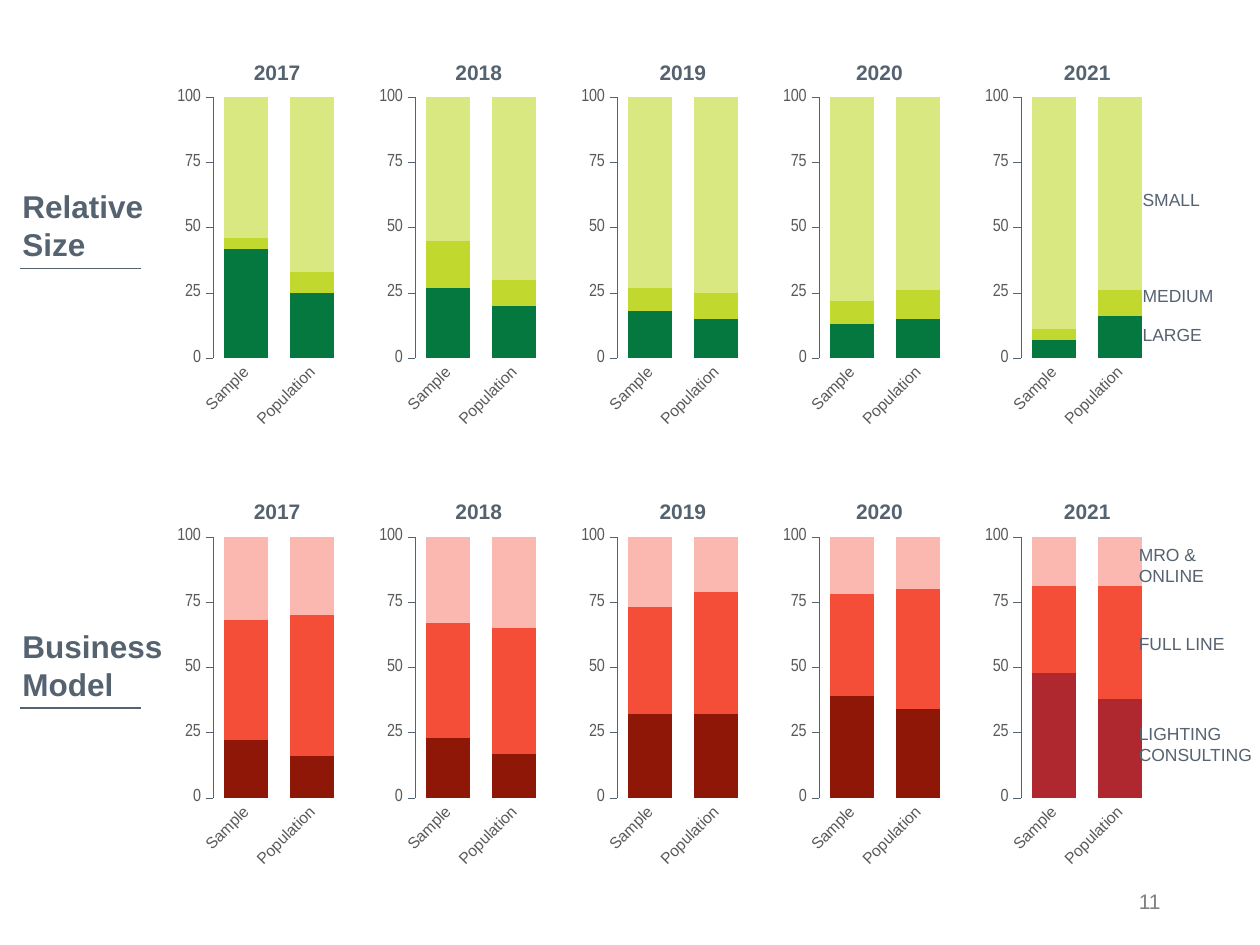
from lxml.etree import SubElement
from pptx import Presentation
from pptx.chart.data import CategoryChartData
from pptx.dml.color import RGBColor
from pptx.enum.chart import XL_CHART_TYPE as ChartType, XL_TICK_MARK as TickMark
from pptx.enum.shapes import MSO_CONNECTOR as Connector
from pptx.enum.text import MSO_ANCHOR as Anchor, PP_ALIGN as Align
from pptx.oxml import parse_xml
from pptx.oxml.ns import nsdecls, qn
from pptx.util import Inches, Pt

COLORS = {
    "slate": "556270", "label": "595959", "page": "808080", "black": "000000",
    "green": "04783F", "lime": "C1D82F", "pale_lime": "DAE882",
    "maroon": "8F1708", "crimson": "AF272F", "red": "F44E39", "pink": "FBB8B0",
}
YEARS = ["2017", "2018", "2019", "2020", "2021"]
YEAR_LEFTS = [1.83, 3.43, 5.05, 6.61, 8.26]
FIRST_CHART, LAST_CHART = 1.37, 7.78
CHART_STEP = (LAST_CHART - FIRST_CHART) / (len(YEARS) - 1)
PLOT_AREA = {"x": 0.23, "y": 0.04, "w": 0.75, "h": 0.74}

GREENS = ["green", "lime", "pale_lime"]
REDS = ["maroon", "red", "pink"]
# Each year holds (sample, population) for every series, bottom to top.
SIZE_ROW = {
    "top": 0.46, "title": ("Relative Size", 1.24),
    "colors": [GREENS] * 5,
    "values": [
        [(42, 25), (4, 8), (54, 67)],
        [(27, 20), (18, 10), (55, 70)],
        [(18, 15), (9, 10), (73, 75)],
        [(13, 15), (9, 11), (78, 74)],
        [(7, 16), (4, 10), (89, 74)],
    ],
    "labels": [("SMALL", 8.97, 1.38, 0.78), ("MEDIUM", 8.97, 2.14, 0.89),
               ("LARGE", 8.97, 2.45, 0.78)],
}
MODEL_ROW = {
    "top": 3.95, "title": ("Business Model", 1.4),
    "colors": [REDS] * 4 + [["crimson", "red", "pink"]],
    "values": [
        [(22, 16), (46, 54), (32, 30)],
        [(23, 17), (44, 48), (33, 35)],
        [(32, 32), (41, 47), (27, 21)],
        [(39, 34), (39, 46), (22, 20)],
        [(48, 38), (33, 43), (19, 19)],
    ],
    "labels": [("MRO & ONLINE", 8.94, 4.28, 0.78), ("FULL LINE", 8.94, 4.9, 0.89),
               ("LIGHTING CONSULTING", 8.94, 5.7, 1.17)],
}


def rgb(name):
    return RGBColor.from_string(COLORS[name])


def style_font(font, size, color, name="Arial", bold=False):
    font.size, font.name, font.bold = Pt(size), name, bold
    font.color.rgb = rgb(color)


def add_text(page, text, left, top, width, height, size,
             color="slate", bold=False, align=Align.LEFT):
    box = page.shapes.add_textbox(*map(Inches, (left, top, width, height)))
    frame = box.text_frame
    frame.word_wrap = True
    frame.vertical_anchor = Anchor.MIDDLE
    para = frame.paragraphs[0]
    para.text, para.alignment = text, align
    style_font(para.font, size, color, bold=bold)


def add_rule(page, top):
    rule = page.shapes.add_connector(
        Connector.STRAIGHT, Inches(0.16), Inches(top), Inches(1.12), Inches(top))
    rule.line.color.rgb = rgb("slate")
    rule.line.width = Pt(1)
    SubElement(rule.element.spPr, qn("a:effectLst"))


def fix_plot_area(chart):
    """Pin the inner plot area so that every chart lines up."""
    plot_area = chart.element.find(".//" + qn("c:plotArea"))
    for old in plot_area.findall(qn("c:layout")):
        plot_area.remove(old)
    sizes = "".join(f'<c:{key} val="{value}"/>' for key, value in PLOT_AREA.items())
    plot_area.insert(0, parse_xml(
        f'<c:layout {nsdecls("c")}><c:manualLayout><c:layoutTarget val="inner"/>'
        f'<c:xMode val="edge"/><c:yMode val="edge"/>{sizes}'
        '</c:manualLayout></c:layout>'))


def style_axes(chart):
    across = chart.category_axis
    across.major_tick_mark = across.minor_tick_mark = TickMark.NONE
    across.format.line.fill.background()
    style_font(across.tick_labels.font, 9, "label")
    body = chart.element.find(
        "/".join([".//" + qn("c:catAx"), qn("c:txPr"), qn("a:bodyPr")]))
    body.set("rot", "-2700000")

    upright = chart.value_axis
    upright.minimum_scale, upright.maximum_scale, upright.major_unit = 0, 100, 25
    upright.has_major_gridlines = False
    upright.major_tick_mark, upright.minor_tick_mark = TickMark.OUTSIDE, TickMark.NONE
    upright.format.line.color.rgb = rgb("slate")
    upright.format.line.width = Pt(0.25)
    style_font(upright.tick_labels.font, 10, "label", "Arial Narrow")


def add_stacked_chart(page, left, top, values, colors):
    data = CategoryChartData()
    data.categories = ["Sample", "Population"]
    for number, pair in enumerate(values, 1):
        data.add_series(f"Series {number}", pair)
    chart = page.shapes.add_chart(
        ChartType.COLUMN_STACKED, Inches(left), Inches(top),
        Inches(1.4), Inches(2.8), data).chart
    chart.has_title = chart.has_legend = False
    style_font(chart.font, 10, "black")
    plot = chart.plots[0]
    plot.gap_width, plot.overlap, plot.vary_by_categories = 50, 100, False
    for series, color in zip(plot.series, colors):
        series.format.fill.solid()
        series.format.fill.fore_color.rgb = rgb(color)
    style_axes(chart)
    fix_plot_area(chart)


def add_row(page, row):
    """Add a heading, one chart for each year and the series labels."""
    top = row["top"]
    title, width = row["title"]
    add_text(page, title, 0.08, top + 1.03, width, 0.59, 18, bold=True)
    add_rule(page, top + 1.67)
    columns = zip(YEARS, YEAR_LEFTS, row["values"], row["colors"])
    for index, (year, year_left, values, colors) in enumerate(columns):
        add_stacked_chart(page, FIRST_CHART + index * CHART_STEP, top + 0.2,
                          values, colors)
        add_text(page, year, year_left, top, 0.74, 0.22, 12,
                 bold=True, align=Align.CENTER)
    for text, left, label_top, label_width in row["labels"]:
        add_text(page, text, left, label_top, label_width, 0.41, 10)


def main():
    deck = Presentation()
    deck.slide_width, deck.slide_height = Inches(10), Inches(7.5)
    page = deck.slides.add_slide(deck.slide_layouts[6])
    for row in (SIZE_ROW, MODEL_ROW):
        add_row(page, row)
    add_text(page, "11", 7.06, 6.95, 2.25, 0.4, 12, "page", align=Align.RIGHT)
    deck.save("out.pptx")


if __name__ == "__main__":
    main()
